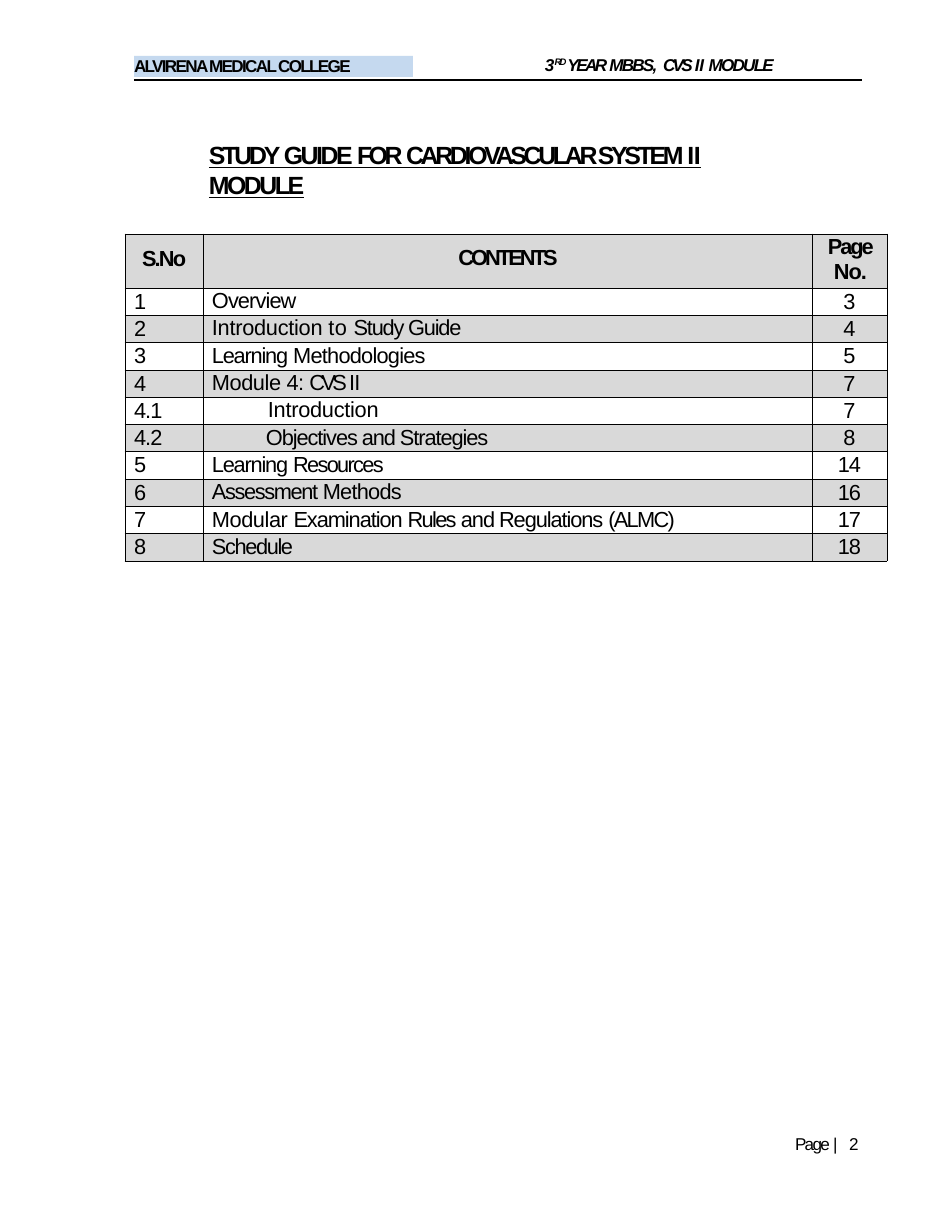
from dataclasses import dataclass

from lxml.etree import SubElement as Sub
from pptx import Presentation
from pptx.dml.color import RGBColor as Color
from pptx.enum.shapes import MSO_CONNECTOR as Link, MSO_SHAPE as Kind
from pptx.enum.text import MSO_ANCHOR as Anchor, MSO_AUTO_SIZE as Fit, PP_ALIGN as Align
from pptx.oxml.ns import qn
from pptx.util import Emu, Pt

SCALE = 914400 / 112


@dataclass(frozen=True)
class Theme:
    font: str = "Arial"
    ink: str = "000000"
    blue: str = "C5D9EF"
    gray: str = "D9D9D9"
    small: float = 11
    raised: float = 10.5
    body: float = 14
    title: float = 16


THEME = Theme()
LEFT, TOP = 125, 234
COLS = (78, 609, 75)
HEAD, ROW = 54, 27.3

# Each run is its text and its letter spacing in points
ITEMS = [
    (("1", 0), [("Overview", -0.6)], ("3", 0)),
    (("2", 0), [("Introduction ", -0.2), ("to ", 0.2), ("Study Guide", -0.8)], ("4", 0)),
    (("3", 0), [("Learning ", -0.8), ("Methodologies", -0.5)], ("5", 0)),
    (("4", 0), [("Module ", -0.3), ("4: ", -0.5), ("CVS ", -2.4), ("II", -0.5)], ("7", 0)),
    (("4.1", -0.6), [("Introduction", -0.2)], ("7", 0)),
    (("4.2", -0.6), [("Objectives and Strategies", -0.7)], ("8", 0)),
    (("5", 0), [("Learning ", -0.8), ("Resources", -1.1)], ("14", -0.7)),
    (("6", 0), [("Assessment ", -0.9), ("Methods", -0.5)], ("16", -0.7)),
    (("7", 0), [("Modular ", -0.3), ("Examination ", -0.7), ("Rules ", -1.1),
                ("and Regulations ", -0.7), ("(ALMC)", -1.1)], ("17", -0.8)),
    (("8", 0), [("Schedule", -0.9)], ("18", -0.8)),
]
NESTED = {"4.1": 65, "4.2": 63}


def px(num):
    return Emu(round(num * SCALE))


def paint(fill, tone):
    fill.solid()
    fill.fore_color.rgb = Color.from_string(tone)


def write(para, runs, size, indent=0, line=None, align=Align.LEFT,
          bold=False, slant=False, under=False):
    para.alignment = align
    para.line_spacing = Pt(line) if line else None
    props = para._p.get_or_add_pPr()
    props.set("marL", str(px(indent)))
    props.set("indent", "0")
    for text, gap, *lift in runs:
        run = para.add_run()
        run.text = text
        font = run.font
        font.name, font.size = THEME.font, Pt(THEME.raised if lift else size)
        font.bold, font.italic, font.underline = bold, slant, under
        font.color.rgb = Color.from_string(THEME.ink)
        font._element.set("spc", str(round(gap * 100)))
        if lift:
            font._element.set("baseline", str(lift[0] * 1000))


def frame(shape, runs, size, inset=0, **style):
    body = shape.text_frame
    body.margin_left = body.margin_right = body.margin_bottom = 0
    body.margin_top = px(inset)
    body.word_wrap, body.auto_size = True, Fit.SHAPE_TO_FIT_TEXT
    body.vertical_anchor = Anchor.TOP
    write(body.paragraphs[0], runs, size, **style)


def add_text(slide, box, runs, size, **style):
    frame(slide.shapes.add_textbox(*map(px, box)), runs, size, **style)


def add_band(slide, box, runs, size, **style):
    band = slide.shapes.add_shape(Kind.RECTANGLE, *map(px, box))
    band.shadow.inherit = False
    paint(band.fill, THEME.blue)
    band.line.fill.background()
    frame(band, runs, size, **style)


def add_rule(slide, start, end):
    rule = slide.shapes.add_connector(Link.STRAIGHT, *map(px, start + end))
    rule.line.color.rgb = Color.from_string(THEME.ink)
    rule.line.width = Pt(0.75)
    Sub(rule._element.spPr, qn("a:effectLst"))


def dress(cell, shade, inset=0):
    cell.margin_left = cell.margin_right = cell.margin_bottom = 0
    cell.margin_top = px(inset)
    cell.vertical_anchor = Anchor.TOP
    props = cell._tc.get_or_add_tcPr()
    for side in ("lnL", "lnR", "lnT", "lnB"):
        edge = Sub(props, qn("a:" + side), w=str(Pt(0.5)))
        Sub(Sub(edge, qn("a:solidFill")), qn("a:srgbClr"), val=THEME.ink)
    if shade:
        paint(cell.fill, THEME.gray)
    else:
        cell.fill.background()
    return cell.text_frame.paragraphs[0]


def add_list(slide):
    count = len(ITEMS)
    tall = HEAD + round(count * ROW)
    grid = slide.shapes.add_table(count + 1, len(COLS), px(LEFT), px(TOP),
                                  px(sum(COLS)), px(tall)).table
    grid.first_row = grid.horz_banding = False
    for col, wide in zip(grid.columns, COLS):
        col.width = px(wide)
    for num, row in enumerate(grid.rows):
        row.height = px(ROW if num else HEAD)

    # Heading row
    size = THEME.body
    write(dress(grid.cell(0, 0), True, 13), [("S.No", -1.2)], size, indent=17, bold=True)
    write(dress(grid.cell(0, 1), True, 12), [("CONTENTS", -1.9)], size,
          indent=1, align=Align.CENTER, bold=True)
    page = grid.cell(0, 2)
    write(dress(page, True), [("Page", -1.4)], size, indent=16, line=16.2, bold=True)
    write(page.text_frame.add_paragraph(), [("No.", -0.7)], size, indent=22, bold=True)

    # Entries, every second one shaded
    for num, (mark, name, leaf) in enumerate(ITEMS, 1):
        left, mid, right = (dress(grid.cell(num, col), num % 2 == 0) for col in range(3))
        write(left, [mark], size, indent=9, line=16.6)
        write(mid, name, size, indent=NESTED.get(mark[0], 9), line=16.3)
        write(right, [leaf], size, line=16.6, align=Align.CENTER)


def main():
    deck = Presentation()
    deck.slide_width, deck.slide_height = px(952), px(1232)
    slide = deck.slides.add_slide(deck.slide_layouts[6])

    # Page header and footer
    add_rule(slide, (134, 80), (862, 80))
    add_text(slide, (544, 53, 318, 22),
             [("3", -0.8), ("RD ", -1.1, 32), ("YEAR ", -1.7), ("MBBS,  ", -1.2),
              ("CVS ", -1.8), ("II ", -0.1), ("MODULE", -1.2)],
             THEME.small, inset=1, indent=1, bold=True, slant=True)
    add_text(slide, (794, 1136, 72, 20), [("Page ", -1.1), ("| ", 2.2), ("2", -0.6)],
             THEME.small, indent=1, line=11.5)
    add_band(slide, (134, 56, 279, 21), [("ALVIRENA MEDICAL COLLEGE", -1.1)],
             THEME.small, line=12.9, bold=True)

    # Title
    add_text(slide, (208, 139, 590, 32),
             [("STUDY ", -2), ("GUIDE ", -1.6), ("FOR ", -2.2),
              ("CARDIOVASCULAR SYSTEM ", -2.1), ("II", -0.2), (" ", -1), ("MODULE", -1.6)],
             THEME.title, inset=1, indent=1, bold=True, under=True)

    # Contents table
    add_list(slide)
    deck.save("out.pptx")


if __name__ == "__main__":
    main()
